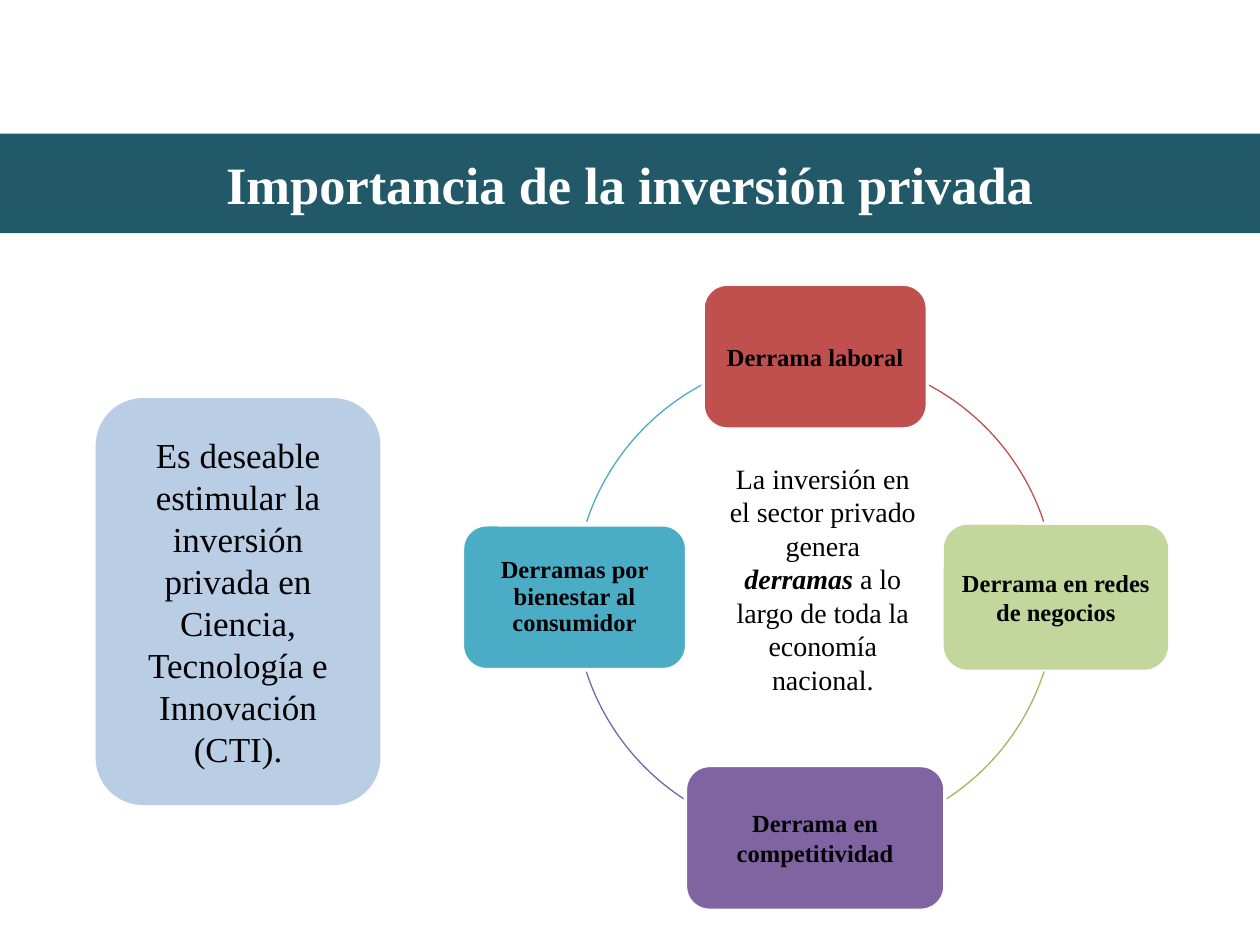
from pptx import Presentation
from pptx.dml.color import RGBColor
from pptx.enum.shapes import MSO_SHAPE
from pptx.enum.text import MSO_ANCHOR, PP_ALIGN
from pptx.util import Inches, Pt

RECT, ROUNDED, ARC = MSO_SHAPE.RECTANGLE, MSO_SHAPE.ROUNDED_RECTANGLE, MSO_SHAPE.ARC
MIDDLE, TOP, CENTER = MSO_ANCHOR.MIDDLE, MSO_ANCHOR.TOP, PP_ALIGN.CENTER

WHITE = RGBColor(0xFF, 0xFF, 0xFF)
BLACK = RGBColor(0x00, 0x00, 0x00)
TEAL = RGBColor(0x21, 0x59, 0x68)
PALE_BLUE = RGBColor(0xB9, 0xCD, 0xE5)
RED = RGBColor(0xC0, 0x50, 0x4D)
PALE_GREEN = RGBColor(0xC3, 0xD6, 0x9B)
GREEN = RGBColor(0x9B, 0xBB, 0x59)
PURPLE = RGBColor(0x80, 0x64, 0xA2)
CYAN = RGBColor(0x4B, 0xAC, 0xC6)

TITLE = "Importancia de la inversión privada"
REASON = ("Es deseable estimular la inversión privada en Ciencia, "
          "Tecnología e Innovación (CTI).")
CENTER_RUNS = [
    ("La inversión en el sector privado genera ", {}),
    ("derramas", {"bold": True, "italic": True}),
    (" a lo largo de toda la economía nacional.", {}),
]

# Cycle geometry: centre and radius of the ring, height of each box
CX, CY, RADIUS, BOX_H = 6.47, 4.74, 1.91, 1.15
# text, direction from the centre, width, fill, outline, line spacing
SPILLOVERS = [
    ("Derrama laboral", (0, -1), 1.78, RED, WHITE, 1),
    ("Derrama en redes de negocios", (1, 0), 1.78, PALE_GREEN, None, 1),
    ("Derrama en competitividad", (0, 1), 2.06, PURPLE, WHITE, 1),
    ("Derramas por bienestar al consumidor", (-1, 0), 1.78, CYAN, WHITE, 0.9),
]
# start and end in degrees, clockwise from the right
ARCS = [(298, 341.7, RED), (18, 57, GREEN), (123, 162, PURPLE), (198.3, 242, CYAN)]


def write(shape, runs, size, color=BLACK, bold=False, anchor=MIDDLE,
          spacing=1, inset=None):
    tf = shape.text_frame
    tf.word_wrap = True
    tf.vertical_anchor = anchor
    if inset is not None:
        for side in ("left", "right", "top", "bottom"):
            setattr(tf, f"margin_{side}", Inches(inset))
    p = tf.paragraphs[0]
    p.alignment = CENTER
    p.line_spacing = spacing
    for text, extra in runs:
        r = p.add_run()
        r.text = text
        formats = {"name": "Times New Roman", "size": Pt(size), "bold": bold, **extra}
        for name, value in formats.items():
            setattr(r.font, name, value)
        r.font.color.rgb = color


def add_shape(s, kind, box, fill=None, line=None, width=2):
    shape = s.shapes.add_shape(kind, *map(Inches, box))
    shape.shadow.inherit = False
    if fill is None:
        shape.fill.background()
    else:
        shape.fill.solid()
        shape.fill.fore_color.rgb = fill
    if line is None:
        shape.line.fill.background()
    else:
        shape.line.color.rgb = line
        shape.line.width = Pt(width)
    return shape


def main():
    prs = Presentation()
    prs.slide_width, prs.slide_height = Inches(10), Inches(7.5)
    s = prs.slides.add_slide(prs.slide_layouts[6])

    banner = add_shape(s, RECT, (0, 1.06, 10, 0.79), TEAL)
    write(banner, [(TITLE, {})], 30, WHITE, bold=True)

    for start, end, color in ARCS:
        ring = (CX - RADIUS, CY - RADIUS, 2 * RADIUS, 2 * RADIUS)
        arc = add_shape(s, ARC, ring, line=color, width=0.75)
        for i, degrees in enumerate((start, end)):
            arc.adjustments[i] = degrees * 0.6  # 60000 units a degree, over 100000

    for text, (dx, dy), width, fill, line, spacing in SPILLOVERS:
        left = CX + dx * RADIUS - width / 2
        top = CY + dy * RADIUS - BOX_H / 2
        box = add_shape(s, ROUNDED, (left, top, width, BOX_H), fill, line)
        write(box, [(text, {})], 14, bold=True, spacing=spacing, inset=0.06)

    middle = s.shapes.add_textbox(*map(Inches, (5.69, 3.61, 1.68, 1.99)))
    write(middle, CENTER_RUNS, 16, anchor=TOP)

    reason = add_shape(s, ROUNDED, (0.76, 3.16, 2.26, 3.23), PALE_BLUE)
    write(reason, [(REASON, {})], 20)

    prs.save("out.pptx")


if __name__ == "__main__":
    main()
